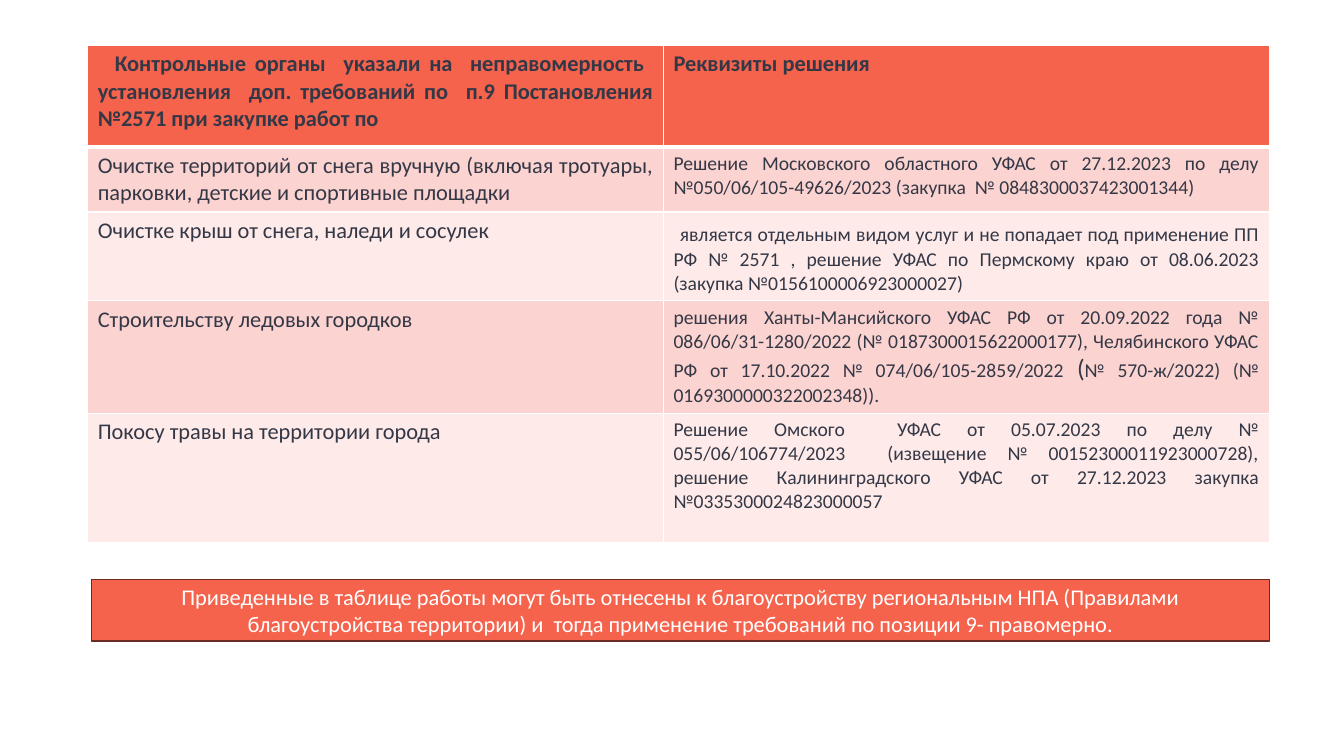
from lxml import etree
from pptx import Presentation
from pptx import util as u
from pptx.dml.color import RGBColor
from pptx.enum import shapes, text
from pptx.oxml import ns

COLORS = {
    "accent": "F5634D",
    "band_dark": "FBD3D0",
    "band_light": "FDEAE9",
    "ink": "343846",
    "white": "FFFFFF",
    "note_edge": "6B2B22",
}
FONT = "Calibri"
COLUMN_WIDTHS = [5.71, 6.01]
ROW_HEIGHTS = [1.01, 0.64, 0.88, 1.11, 1.28]

HEADINGS = [
    "Контрольные органы  указали на  неправомерность  установления  доп. требований по  "
    "п.9 Постановления №2571 при закупке работ по",
    "Реквизиты решения",
]
# Each work is followed by the runs of its decision: (text, size)
DECISIONS = [
    ("Очистке территорий от снега вручную (включая тротуары, парковки, детские и спортивные площадки",
     [("Решение Московского областного УФАС от 27.12.2023 по делу №050/06/105-49626/2023 "
       "(закупка  № 0848300037423001344) ", 14)]),
    ("Очистке крыш от снега, наледи и сосулек ",
     [(" ", 18),
      ("является отдельным видом услуг и не попадает под применение ПП РФ № 2571 , "
       "решение УФАС по Пермскому краю от 08.06.2023 (закупка №0156100006923000027) ", 14)]),
    ("Строительству ледовых городков",
     [("решения Ханты-Мансийского УФАС РФ от 20.09.2022 года № 086/06/31-1280/2022 "
       "(№ 0187300015622000177), Челябинского УФАС РФ от 17.10.2022 № 074/06/105-2859/2022 ", 14),
      ("(", 18),
      ("№ 570-ж/2022) (№ 0169300000322002348)).", 14)]),
    ("Покосу травы на территории города",
     [("Решение Омского  УФАС от 05.07.2023 по делу № 055/06/106774/2023  "
       "(извещение № 00152300011923000728), решение Калининградского УФАС от 27.12.2023 "
       "закупка №0335300024823000057 ", 14)]),
]
NOTE = ("Приведенные в таблице работы могут быть отнесены к благоустройству региональным НПА "
        "(Правилами благоустройства территории) и  тогда применение требований по позиции 9- правомерно.")


def color(name):
    return RGBColor.from_string(COLORS[name])


def write_runs(paragraph, runs, ink, align, bold=False):
    paragraph.alignment = align
    for words, size in runs:
        run = paragraph.add_run()
        run.text = words
        run.font.name = FONT
        run.font.size = u.Pt(size)
        run.font.bold = bold
        run.font.color.rgb = color(ink)


def set_borders(cell, top, bottom):
    """Draw white cell borders; top and bottom are widths in points."""
    properties = cell._tc.get_or_add_tcPr()
    for side, width in (("L", 1), ("R", 1), ("T", top), ("B", bottom)):
        border = etree.SubElement(properties, ns.qn(f"a:ln{side}"), w=str(u.Pt(width)))
        fill = etree.SubElement(border, ns.qn("a:solidFill"))
        etree.SubElement(fill, ns.qn("a:srgbClr"), val=COLORS["white"])


def add_decisions_table(slide):
    rows = [[[(heading, 16)] for heading in HEADINGS]]
    rows += [[[(work, 16)], decision] for work, decision in DECISIONS]
    table = slide.shapes.add_table(
        len(rows), len(COLUMN_WIDTHS), u.Inches(0.87), u.Inches(0.45),
        u.Inches(sum(COLUMN_WIDTHS)), u.Inches(sum(ROW_HEIGHTS))).table
    for column, width in zip(table.columns, COLUMN_WIDTHS):
        column.width = u.Inches(width)
    for r, (row, height) in enumerate(zip(rows, ROW_HEIGHTS)):
        table.rows[r].height = u.Inches(height)
        band = "accent" if r == 0 else ("band_light", "band_dark")[r % 2]
        for c, runs in enumerate(row):
            cell = table.cell(r, c)
            set_borders(cell, top=3 if r == 1 else 1, bottom=3 if r == 0 else 1)
            cell.fill.solid()
            cell.fill.fore_color.rgb = color(band)
            write_runs(cell.text_frame.paragraphs[0], runs, "ink",
                       text.PP_ALIGN.JUSTIFY, bold=r == 0)
    first_heading = table.cell(0, 0).text_frame.paragraphs[0]
    first_heading._p.get_or_add_pPr().set("indent", str(u.Inches(0.17)))


def add_note(slide):
    note = slide.shapes.add_shape(
        shapes.MSO_SHAPE.RECTANGLE, u.Inches(0.91), u.Inches(5.75), u.Inches(11.68), u.Inches(0.61))
    note.shadow.inherit = False
    note.fill.solid()
    note.fill.fore_color.rgb = color("accent")
    note.line.color.rgb = color("note_edge")
    note.line.width = u.Pt(1)
    frame = note.text_frame
    frame.word_wrap = True
    frame.vertical_anchor = text.MSO_ANCHOR.MIDDLE
    write_runs(frame.paragraphs[0], [(NOTE, 16)], "white", text.PP_ALIGN.CENTER)


def main():
    deck = Presentation()
    deck.slide_width, deck.slide_height = u.Inches(13.33), u.Inches(7.5)
    slide = deck.slides.add_slide(deck.slide_layouts[6])
    add_decisions_table(slide)
    add_note(slide)
    deck.save("out.pptx")


if __name__ == "__main__":
    main()
